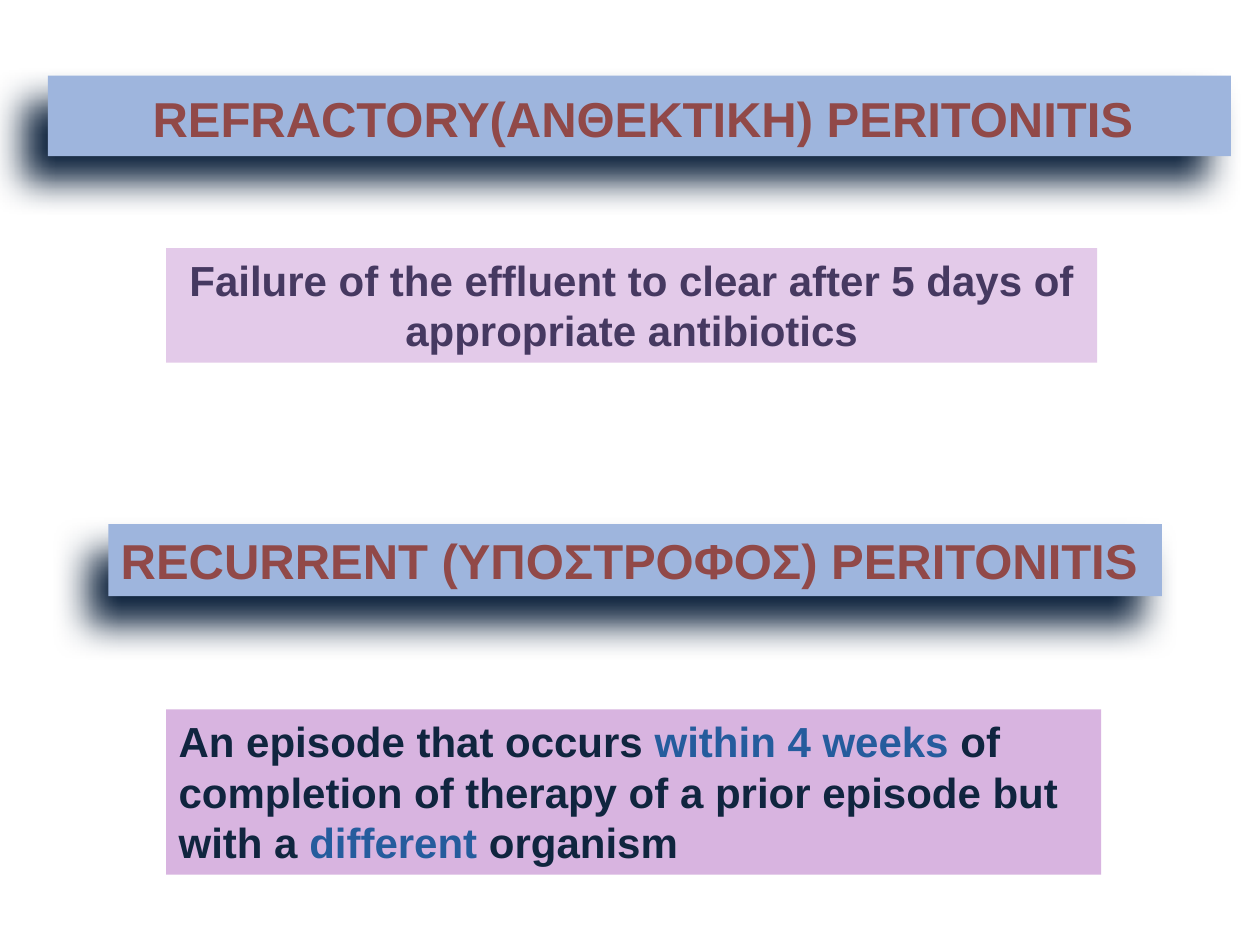
from lxml import etree
from pptx import Presentation
from pptx import util as u
from pptx.dml.color import RGBColor
from pptx.enum import shapes, text
from pptx.oxml import ns

Pt = u.Pt
HUES = {
    "blue": "9EB5DD",
    "lilac": "D8B4E0",
    "shade": "0F243E",
    "red": "914948",
    "plum": "463961",
    "navy": "10253F",
    "link": "255C9D",
}


def add_node(base, tag, **attrs):
    """Append a DrawingML child element to base."""
    return etree.SubElement(base, ns.qn("a:" + tag), attrs)


def add_box(slide, place, hue, alpha=None):
    """Add a plain filled box, optionally see-through."""
    box = slide.shapes.add_shape(
        shapes.MSO_SHAPE.RECTANGLE, *[Pt(n) for n in place])
    box.shadow.inherit = False
    box.line.fill.background()
    box.fill.solid()
    box.fill.fore_color.rgb = RGBColor.from_string(HUES[hue])
    if alpha:
        color = box._element.spPr.find(".//" + ns.qn("a:srgbClr"))
        add_node(color, "alpha", val=str(alpha * 1000))
    return box


def add_shade(box, angle):
    """Give a box a soft shadow cast at an angle in degrees."""
    effects = box._element.spPr.find(ns.qn("a:effectLst"))
    shade = add_node(effects, "outerShdw", blurRad=str(Pt(20)),
                     dist=str(Pt(20)), dir=str(angle * 60000),
                     algn="ctr", rotWithShape="0")
    add_node(shade, "srgbClr", val=HUES["shade"])


def set_text(box, parts, size, align=text.PP_ALIGN.LEFT, wrap=True):
    """Fill a box with bold runs given as wording and hue pairs."""
    frame = box.text_frame
    frame.word_wrap = wrap
    frame.vertical_anchor = text.MSO_ANCHOR.TOP
    para = frame.paragraphs[0]
    para.text = ""
    para.alignment = align
    for words, hue in parts:
        run = para.add_run()
        run.text = words
        run.font.name = "Arial"
        run.font.size = Pt(size)
        run.font.bold = True
        run.font.color.rgb = RGBColor.from_string(HUES[hue])


def add_head(slide, place, words, angle, wrap=True):
    """Add a blue heading bar with a shadow."""
    bar = add_box(slide, place, "blue")
    add_shade(bar, angle)
    set_text(bar, [(words, "red")], 28, wrap=wrap)
    return bar


def main():
    """Build the peritonitis slide and save it."""
    deck = Presentation()
    deck.slide_width, deck.slide_height = Pt(720), Pt(540)
    slide = deck.slides.add_slide(deck.slide_layouts[6])

    bar = add_head(slide, (27.4, 43.2, 676, 46),
                   "REFRACTORY(ANΘΕΚΤΙΚΗ) PERITONITIS", 135)
    bar.text_frame.margin_left = Pt(59.8)
    bar.text_frame.margin_top = Pt(7.2)

    box = add_box(slide, (95, 141.8, 532, 65.4), "lilac", alpha=70)
    set_text(box, [("Failure of the effluent to clear after 5 days of "
                    "appropriate antibiotics", "plum")], 24,
             text.PP_ALIGN.CENTER)

    add_head(slide, (61.9, 299.5, 602, 41.2),
             "RECURRENT (YΠΟΣΤΡΟΦΟΣ) PERITONITIS", 125, wrap=False)

    box = add_box(slide, (95, 405.4, 534.2, 94.4), "lilac")
    set_text(box, [
        ("Αn episode that occurs ", "navy"),
        ("within 4 weeks ", "link"),
        ("of completion of therapy of a prior episode but with a", "navy"),
        (" different ", "link"),
        ("organism", "navy"),
    ], 24)

    deck.save("out.pptx")


if __name__ == "__main__":
    main()
